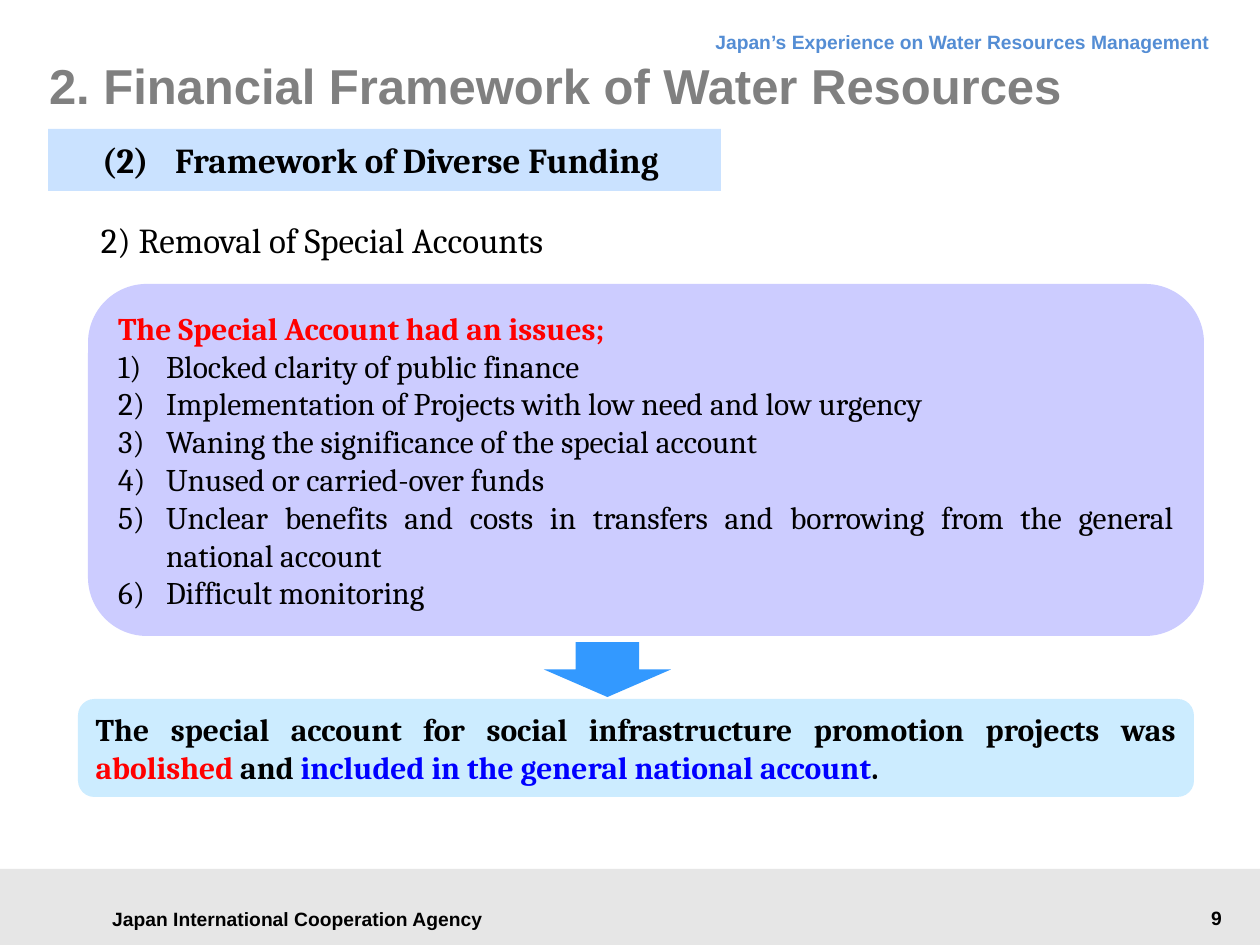
"""Build the slide on the removal of special accounts."""
import dataclasses

import lxml.etree
import pptx
import pptx.dml.color
import pptx.enum.shapes
import pptx.enum.text
import pptx.oxml.ns
import pptx.util

ALIGN = pptx.enum.text.PP_ALIGN
ANCHOR = pptx.enum.text.MSO_ANCHOR
FORM = pptx.enum.shapes.MSO_SHAPE


@dataclasses.dataclass(frozen=True)
class Theme:
    sans: str = "Arial"
    serif: str = "Cambria"
    black: str = "000000"
    gray: str = "808080"
    band: str = "E6E6E6"
    head: str = "548DD4"
    red: str = "FF0000"
    blue: str = "0000FF"
    pale: str = "CAE2FF"
    lilac: str = "CCCCFF"
    aqua: str = "CCECFF"
    arrow: str = "3399FF"
    small: int = 11
    text: int = 18
    topic: int = 20
    title: int = 28


def px(count):
    return pptx.util.Emu(round(count * 914400 / 126))


class Deck:
    def __init__(self, theme):
        self.theme = theme
        self.file = pptx.Presentation()
        self.file.slide_width, self.file.slide_height = px(1260), px(945)
        self.slide = self.file.slides.add_slide(self.file.slide_layouts[1])

    def place(self, item, box):
        item.left, item.top, item.width, item.height = map(px, box)

    def frame(self, item, pad=(13, 6, 13, 6), anchor=ANCHOR.MIDDLE):
        frame = item.text_frame
        frame.word_wrap = True
        frame.auto_size = pptx.enum.text.MSO_AUTO_SIZE.NONE
        frame.vertical_anchor = anchor
        (frame.margin_left, frame.margin_top,
         frame.margin_right, frame.margin_bottom) = map(px, pad)
        return frame

    def fill(self, para, runs, size, font, bold=True, align=ALIGN.LEFT):
        para.alignment = align
        for text, color in runs:
            run = para.add_run()
            run.text = text
            run.font.size = pptx.util.Pt(size)
            run.font.name = font
            run.font.bold = bold
            run.font.color.rgb = pptx.dml.color.RGBColor.from_string(color)

    def indent(self, para, hang, mark=None, **traits):
        props = para._p.get_or_add_pPr()
        props.set("marL", str(px(hang)))
        props.set("indent", str(-px(hang)))
        if mark:
            lxml.etree.SubElement(props, pptx.oxml.ns.qn(mark), **traits)

    def shape(self, form, box, fill):
        item = self.slide.shapes.add_shape(form, *map(px, box))
        item.shadow.inherit = False
        item.fill.solid()
        item.fill.fore_color.rgb = pptx.dml.color.RGBColor.from_string(fill)
        item.line.fill.background()
        return item

    def label(self, box, text, color, size, font, bold=True,
              align=ALIGN.LEFT, anchor=ANCHOR.TOP):
        item = self.slide.shapes.add_textbox(*map(px, box))
        para = self.frame(item, anchor=anchor).paragraphs[0]
        self.fill(para, [(text, color)], size, font, bold, align)
        return para

    def title(self, box, text):
        item = self.slide.shapes.title
        self.place(item, box)
        para = self.frame(item, (0, 0, 0, 0)).paragraphs[0]
        self.fill(para, [(text, self.theme.gray)], self.theme.title, self.theme.sans)

    def topic(self, box, text):
        item = self.shape(FORM.RECTANGLE, box, self.theme.pale)
        para = self.frame(item, (54, 10, 44, 10)).paragraphs[0]
        self.indent(para, 73)
        self.fill(para, [(text, self.theme.black)], self.theme.topic, self.theme.serif)

    def panel(self, box, runs):
        item = self.shape(FORM.ROUNDED_RECTANGLE, box, self.theme.aqua)
        para = self.frame(item).paragraphs[0]
        self.fill(para, runs, self.theme.text, self.theme.serif, align=ALIGN.JUSTIFY)

    def list(self, box, head, lines):
        look = self.theme
        card = self.shape(FORM.ROUNDED_RECTANGLE, box, look.lilac)
        body = self.slide.placeholders[1]
        body._element.addprevious(card._element)
        self.place(body, box)
        frame = self.frame(body, (30, 23, 30, 23))
        for rank, line in enumerate([head, *lines]):
            para = frame.add_paragraph() if rank else frame.paragraphs[0]
            if rank:
                self.indent(para, 48, "a:buAutoNum", type="arabicParenR")
            else:
                self.indent(para, 0, "a:buNone")
            para.space_before = pptx.util.Pt(0)
            color = look.black if rank else look.red
            self.fill(para, [(line, color)], look.text, look.serif,
                      not rank, ALIGN.JUSTIFY)

    def save(self):
        self.file.save("out.pptx")


def main():
    look = Theme()
    deck = Deck(look)
    deck.shape(FORM.RECTANGLE, (0, 869, 1260, 76), look.band)
    deck.label((89, 897, 417, 43), "Japan International Cooperation Agency",
               look.black, look.small, look.sans,
               align=ALIGN.CENTER, anchor=ANCHOR.MIDDLE)
    head = deck.label((343, 16, 880, 48),
                      "Japan’s Experience on Water Resources Management",
                      look.head, look.small, look.sans, align=ALIGN.RIGHT)
    head.line_spacing = pptx.util.Pt(18)
    deck.label((1037, 900, 198, 36), "9", look.black, look.small, look.sans,
               align=ALIGN.RIGHT)
    deck.title((49, 35, 1134, 100), "2. Financial Framework of Water Resources")
    deck.topic((48, 129, 673, 62), "(2)\tFramework of Diverse Funding")
    deck.label((88, 212, 1095, 55), "2) Removal of Special Accounts",
               look.black, look.topic, look.serif, bold=False)
    deck.list((88, 284, 1116, 352), "The Special Account had an issues;", [
        "Blocked clarity of public finance",
        "Implementation of Projects with low need and low urgency",
        "Waning the significance of the special account",
        "Unused or carried-over funds",
        "Unclear benefits and costs in transfers and borrowing "
        "from the general national account",
        "Difficult monitoring",
    ])
    deck.shape(FORM.DOWN_ARROW, (544, 642, 127, 55), look.arrow)
    deck.panel((78, 699, 1116, 98), [
        ("The special account for social infrastructure promotion projects was ",
         look.black),
        ("abolished", look.red),
        (" and ", look.black),
        ("included in the general national account", look.blue),
        (".", look.black),
    ])
    deck.save()


if __name__ == "__main__":
    main()
